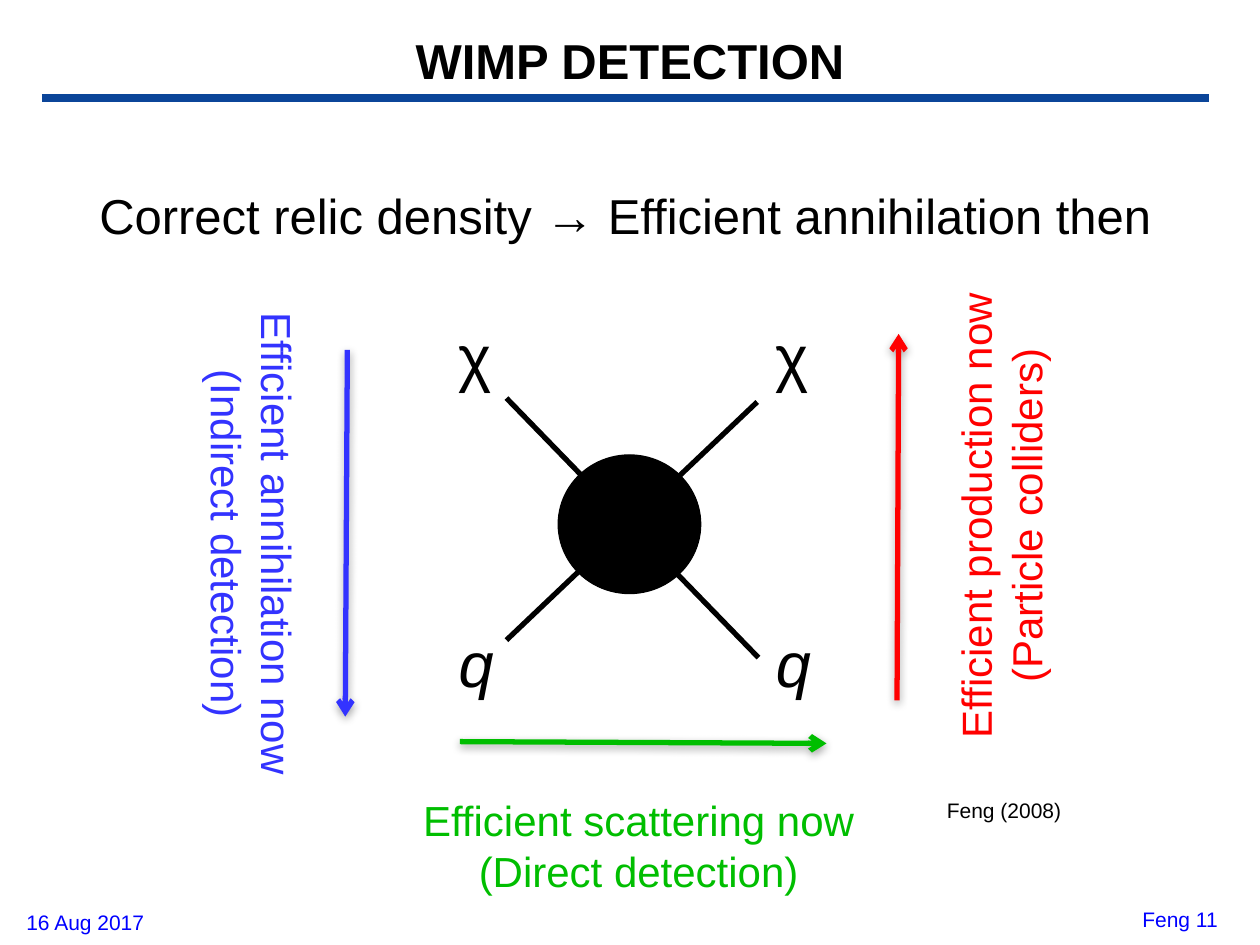
from lxml import etree
from pptx import Presentation
from pptx import util as u
from pptx.dml.color import RGBColor
from pptx.enum import shapes, text
from pptx.oxml import ns

BLACK = RGBColor(0, 0, 0)
RULE_BLUE = RGBColor(0x0B, 0x45, 0x99)
FOOTER_BLUE = RGBColor(0, 0, 0xFF)
INDIRECT_BLUE = RGBColor(0x33, 0x33, 0xFF)
DIRECT_GREEN = RGBColor(0, 0xBE, 0)
COLLIDER_RED = RGBColor(0xFF, 0, 0)

LEFT = text.PP_ALIGN.LEFT
CENTER = text.PP_ALIGN.CENTER
RIGHT = text.PP_ALIGN.RIGHT


class Diagram:
    font = "Arial"

    def __init__(self, deck):
        self.page = deck.slides.add_slide(deck.slide_layouts[6])

    def label(self, place, lines, size, color=BLACK, align=LEFT, bold=False,
              italic=False, wrap=False, turn=0, spacing=None, middle=False):
        box = self.page.shapes.add_textbox(*map(u.Pt, place))
        box.rotation = turn
        frame = box.text_frame
        frame.word_wrap = wrap
        if middle:
            frame.vertical_anchor = text.MSO_ANCHOR.MIDDLE
        for index, line in enumerate(lines):
            para = frame.paragraphs[0] if index == 0 else frame.add_paragraph()
            para.alignment = align
            if spacing:
                para.line_spacing = spacing
            span = para.add_run()
            span.text = line
            span.font.name = self.font
            span.font.size = u.Pt(size)
            span.font.bold = bold
            span.font.italic = italic
            span.font.color.rgb = color

    def line(self, start, end, color=BLACK, width=3):
        connector = self.page.shapes.add_connector(
            shapes.MSO_CONNECTOR.STRAIGHT, *map(u.Pt, start + end))
        connector.line.color.rgb = color
        connector.line.width = u.Pt(width)
        properties = connector.element.spPr
        effects = etree.SubElement(properties, ns.qn("a:effectLst"))
        return connector, effects

    def arrow(self, start, end, color):
        connector, effects = self.line(start, end, color)
        outline = connector.line._get_or_add_ln()
        etree.SubElement(outline, ns.qn("a:tailEnd"), type="arrow")
        shadow = etree.SubElement(
            effects, ns.qn("a:outerShdw"), blurRad=str(u.Pt(5)),
            dist=str(u.Pt(1.8)), dir="5400000", rotWithShape="0")
        shade = etree.SubElement(shadow, ns.qn("a:srgbClr"), val=str(BLACK))
        etree.SubElement(shade, ns.qn("a:alpha"), val="35000")

    def disc(self, place, color=BLACK):
        shape = self.page.shapes.add_shape(
            shapes.MSO_SHAPE.OVAL, *map(u.Pt, place))
        shape.shadow.inherit = False
        shape.fill.solid()
        shape.fill.fore_color.rgb = color
        shape.line.color.rgb = color
        shape.line.width = u.Pt(0.75)


def main():
    deck = Presentation()
    deck.slide_width, deck.slide_height = u.Pt(720), u.Pt(540)
    diagram = Diagram(deck)

    diagram.line((24, 56.2), (691, 56.2), RULE_BLUE, 4.5)
    diagram.label((8, 516, 150, 22), ["16 Aug 2017"], 12, FOOTER_BLUE, wrap=True)
    diagram.label((553, 514.5, 150, 25), ["Feng 11"], 12, FOOTER_BLUE, RIGHT, wrap=True)
    diagram.label((18, 12.2, 684, 44), ["WIMP DETECTION"], 28, align=CENTER,
                  bold=True, wrap=True, middle=True)
    diagram.label((49.7, 106, 664.5, 48),
                  ["Correct relic density → Efficient annihilation then"],
                  28, wrap=True, spacing=0.9)

    for symbol, top, italic in (("χ", 178, False), ("q", 353.5, True)):
        for left in (255, 436.3):
            diagram.label((left, top, 34.6, 51), [symbol], 36, italic=italic)
    diagram.line((289.4, 227.5), (433.4, 375.8))
    diagram.line((289.4, 365.8), (432.7, 229.7))
    diagram.disc((319, 260, 81.4, 79.2))

    diagram.label((3.6, 278, 281, 65.4),
                  ["Efficient annihilation now", "(Indirect detection)"],
                  24, INDIRECT_BLUE, CENTER, turn=90)
    diagram.arrow((198.5, 200), (197.3, 409.5), INDIRECT_BLUE)
    diagram.label((233.2, 450.7, 263.5, 65.4),
                  ["Efficient scattering now", "(Direct detection)"],
                  24, DIRECT_GREEN, CENTER)
    diagram.arrow((262.8, 423.8), (472.3, 424.8), DIRECT_GREEN)
    diagram.label((436.3, 262, 271.4, 65.4),
                  ["Efficient production now", "(Particle colliders)"],
                  24, COLLIDER_RED, CENTER, turn=270)
    diagram.arrow((512.6, 400.2), (513.5, 190.8), COLLIDER_RED)
    diagram.label((534, 452.3, 80.6, 21.6), ["Feng (2008)"], 12)

    deck.save("out.pptx")


if __name__ == "__main__":
    main()
